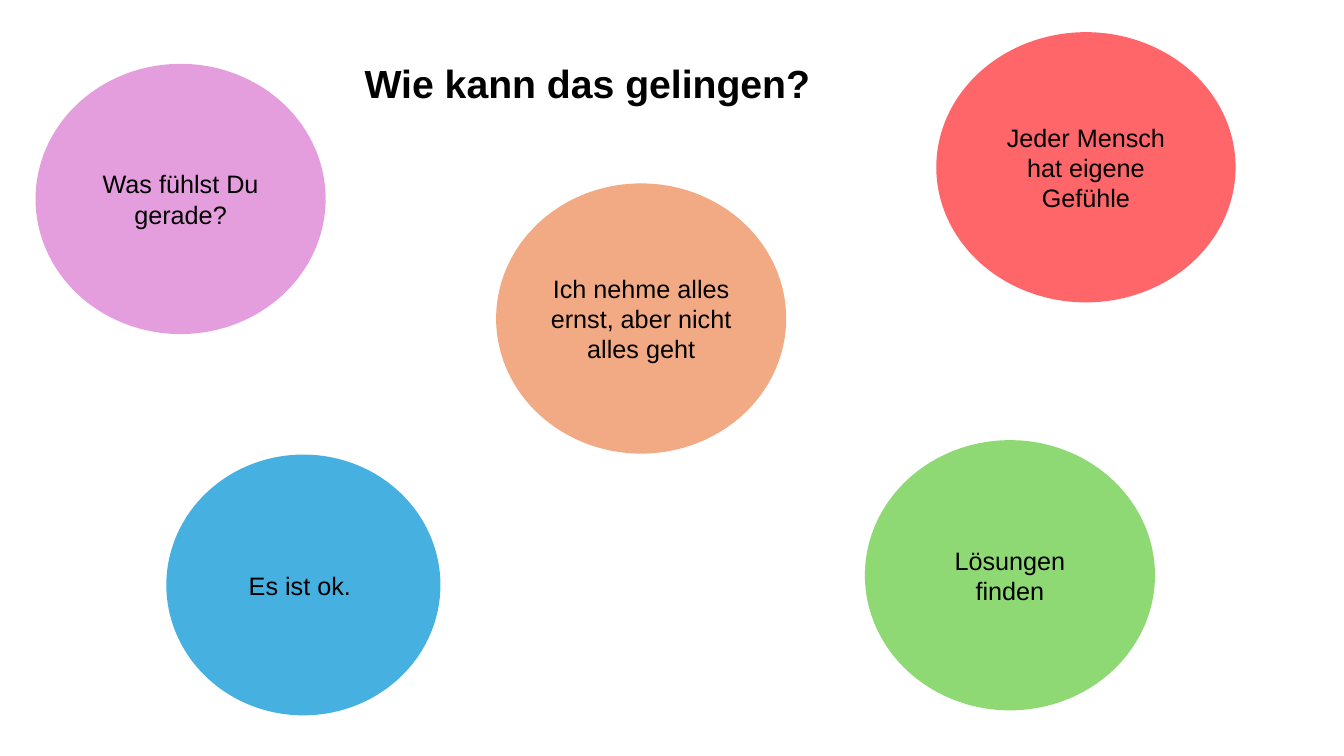
from pptx import Presentation
from pptx.dml.color import RGBColor
from pptx.enum.shapes import MSO_SHAPE as Shape
from pptx.enum.text import MSO_ANCHOR as Anchor, MSO_AUTO_SIZE as AutoSize, PP_ALIGN as Align
from pptx.util import Pt

COLOURS = {
    "text": "000000",
    "pink": "E59EDD",
    "blue": "46B1E1",
    "orange": "F2AA84",
    "green": "8ED973",
    "red": "FE666A",
}


def add_words(paragraph, words, size, bold=False):
    run = paragraph.add_run()
    run.text = words
    run.font.name = "Arial"
    run.font.size = Pt(size)
    run.font.bold = bold
    run.font.color.rgb = RGBColor.from_string(COLOURS["text"])


deck = Presentation()
deck.slide_width, deck.slide_height = Pt(960), Pt(540)
slide = deck.slides.add_slide(deck.slide_layouts[6])

# Thought bubbles: words, colour, left, top, width, height
thoughts = [
    ("Was fühlst Du gerade?", "pink", 25.4, 45.6, 207.2, 193),
    ("Es ist ok. ", "blue", 118.8, 324.7, 195.8, 186.3),
    ("Ich nehme alles ernst, aber nicht alles geht", "orange", 354.4, 131, 207.2, 193),
    ("Lösungen finden", "green", 617.8, 314.4, 207.2, 193),
    ("Jeder Mensch hat eigene Gefühle", "red", 668.8, 23, 213.8, 193),
]
for words, colour, *place in thoughts:
    bubble = slide.shapes.add_shape(Shape.FLOWCHART_CONNECTOR, *map(Pt, place))
    bubble.shadow.inherit = False
    bubble.fill.solid()
    bubble.fill.fore_color.rgb = RGBColor.from_string(COLOURS[colour])
    bubble.line.fill.background()
    bubble.text_frame.word_wrap = True
    bubble.text_frame.vertical_anchor = Anchor.MIDDLE
    thought = bubble.text_frame.paragraphs[0]
    thought.alignment = Align.CENTER
    add_words(thought, words, 18)

heading = slide.shapes.add_textbox(Pt(253.4), Pt(38.9), Pt(395.3), Pt(41)).text_frame
heading.word_wrap = True
heading.auto_size = AutoSize.SHAPE_TO_FIT_TEXT
add_words(heading.paragraphs[0], "Wie kann das gelingen?", 28, bold=True)

deck.save("out.pptx")
